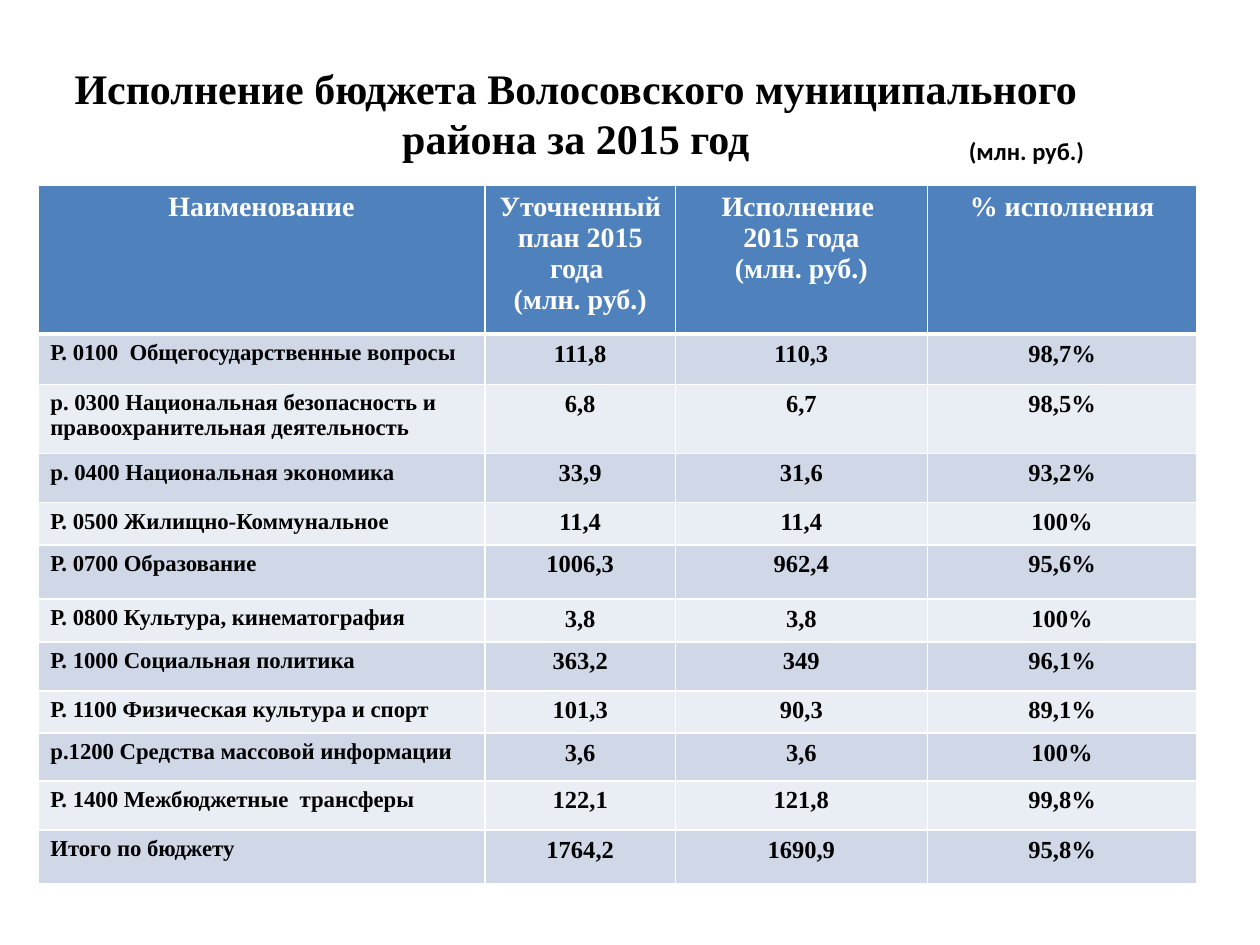
from lxml.etree import SubElement
from pptx import Presentation
from pptx.dml.color import RGBColor
from pptx.enum.text import MSO_ANCHOR as Anchor, PP_ALIGN as Align
from pptx.oxml.ns import qn
from pptx.util import Inches, Pt

BLACK = RGBColor(0x00, 0x00, 0x00)
WHITE = RGBColor(0xFF, 0xFF, 0xFF)
HEADER_BLUE = RGBColor(0x4F, 0x81, 0xBD)
BANDS = (RGBColor(0xD0, 0xD8, 0xE8), RGBColor(0xE9, 0xED, 0xF4))
SERIF = "Times New Roman"

COLUMN_WIDTHS = (3.55, 1.51, 2, 2.14)
ROW_HEIGHTS = (1.18, 0.4, 0.55, 0.39, 0.31, 0.43, 0.34, 0.39, 0.31, 0.38, 0.39, 0.43)
HEADER = (
    ("Наименование",),
    ("Уточненный план 2015 года ", "(млн. руб.)"),
    ("Исполнение ", "2015 года", "(млн. руб.)"),
    ("% исполнения",),
)
BUDGET = (
    ("Р. 0100  Общегосударственные вопросы", "111,8", "110,3", "98,7%"),
    ("р. 0300 Национальная безопасность и правоохранительная деятельность",
     "6,8", "6,7", "98,5%"),
    ("р. 0400 Национальная экономика", "33,9", "31,6", "93,2%"),
    ("Р. 0500 Жилищно-Коммунальное", "11,4", "11,4", "100%"),
    ("Р. 0700 Образование", "1006,3", "962,4", "95,6%"),
    ("Р. 0800 Культура, кинематография", "3,8", "3,8", "100%"),
    ("Р. 1000 Социальная политика", "363,2", "349", "96,1%"),
    ("Р. 1100 Физическая культура и спорт", "101,3", "90,3", "89,1%"),
    ("р.1200 Средства массовой информации", "3,6", "3,6", "100%"),
    ("Р. 1400 Межбюджетные  трансферы", "122,1", "121,8", "99,8%"),
    ("Итого по бюджету", "1764,2", "1690,9", "95,8%"),
)


def write(tf, lines, size, color=BLACK, font=SERIF, align=Align.CENTER):
    for i, line in enumerate(lines):
        p = tf.add_paragraph() if i else tf.paragraphs[0]
        p.alignment = align
        r = p.add_run()
        r.text = line
        r.font.name = font
        r.font.size = Pt(size)
        r.font.bold = True
        r.font.color.rgb = color


def add_text(slide, box, text, size, wrap=True, anchor=Anchor.TOP, **style):
    tf = slide.shapes.add_textbox(*map(Inches, box)).text_frame
    tf.word_wrap = wrap
    tf.vertical_anchor = anchor
    write(tf, [text], size, **style)


def set_borders(cell, top=1, bottom=1):
    tc_pr = cell._tc.get_or_add_tcPr()
    for side, width in (("L", 1), ("R", 1), ("T", top), ("B", bottom)):
        ln = SubElement(tc_pr, qn(f"a:ln{side}"), w=str(Pt(width)))
        fill = SubElement(ln, qn("a:solidFill"))
        SubElement(fill, qn("a:srgbClr"), val=str(WHITE))


def fill_cell(cell, color):
    cell.fill.solid()
    cell.fill.fore_color.rgb = color


def add_budget_table(slide):
    box = (0.3, 1.47, sum(COLUMN_WIDTHS), sum(ROW_HEIGHTS))
    table = slide.shapes.add_table(
        len(ROW_HEIGHTS), len(COLUMN_WIDTHS), *map(Inches, box)).table
    for column, width in zip(table.columns, COLUMN_WIDTHS):
        column.width = Inches(width)
    for row, height in zip(table.rows, ROW_HEIGHTS):
        row.height = Inches(height)

    for col, lines in enumerate(HEADER):
        cell = table.cell(0, col)
        set_borders(cell, bottom=3)
        fill_cell(cell, HEADER_BLUE)
        write(cell.text_frame, lines, 16, WHITE)

    for row, values in enumerate(BUDGET, 1):
        for col, value in enumerate(values):
            cell = table.cell(row, col)
            set_borders(cell, top=3 if row == 1 else 1)
            fill_cell(cell, BANDS[(row - 1) % 2])
            if col == 0:
                write(cell.text_frame, [value], 13, align=Align.LEFT)
            else:
                write(cell.text_frame, [value], 14)


def main():
    prs = Presentation()
    prs.slide_width, prs.slide_height = Inches(10), Inches(7.5)
    slide = prs.slides.add_slide(prs.slide_layouts[6])
    add_text(slide, (0.07, 0.27, 9, 1.25),
             "Исполнение бюджета Волосовского муниципального района за 2015 год",
             24, anchor=Anchor.MIDDLE)
    add_budget_table(slide)
    add_text(slide, (7.59, 1.03, 1.18, 0.34), "(млн. руб.)", 14,
             wrap=False, font="Calibri", align=Align.LEFT)
    prs.save("out.pptx")


if __name__ == "__main__":
    main()
